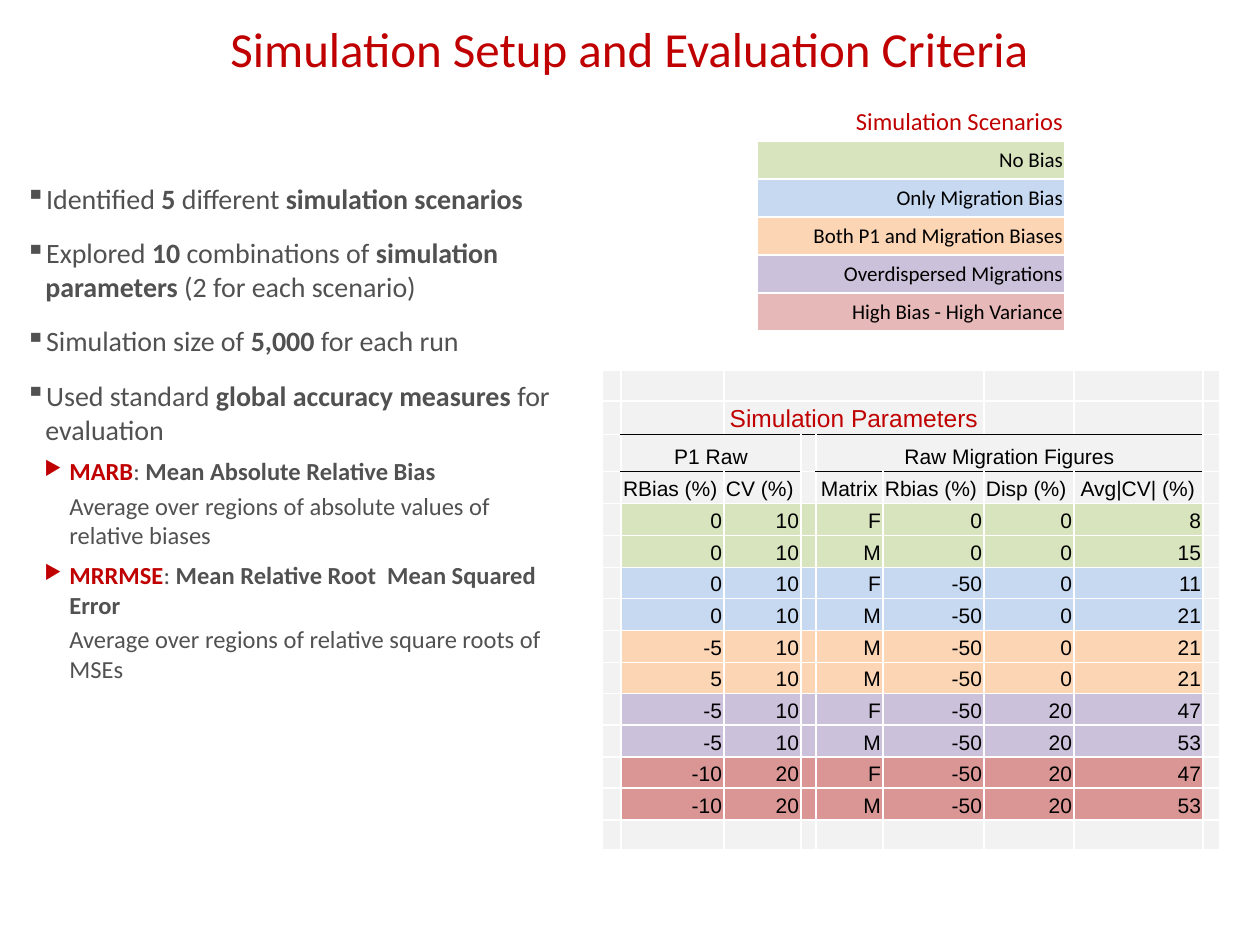
from lxml import etree
from pptx import Presentation
from pptx.dml.color import RGBColor
from pptx.enum.text import MSO_ANCHOR, PP_ALIGN
from pptx.oxml.ns import qn
from pptx.util import Pt

LEFT, CENTER, RIGHT = PP_ALIGN.LEFT, PP_ALIGN.CENTER, PP_ALIGN.RIGHT
MIDDLE, BOTTOM = MSO_ANCHOR.MIDDLE, MSO_ANCHOR.BOTTOM
PX = 914400 / 126

COLORS = {
    "red": "C00000", "gray": "505150", "black": "000000", "white": "FFFFFF",
    "panel": "F2F2F2", "green": "D7E4BD", "blue": "C6D9F1", "orange": "FCD5B5",
    "purple": "CCC1DA", "pink": "E6B9B8", "rose": "D99694",
}

TITLE = "Simulation Setup and Evaluation Criteria"

SCENARIOS = [
    ("No Bias", "green"),
    ("Only Migration Bias", "blue"),
    ("Both P1 and Migration Biases", "orange"),
    ("Overdispersed Migrations", "purple"),
    ("High Bias - High Variance", "pink"),
]

GROUPS = [(1, 2, "P1 Raw"), (4, 7, "Raw Migration Figures")]
HEADERS = [
    (1, "RBias (%)", LEFT), (2, "CV (%)", LEFT), (4, "Matrix", CENTER),
    (5, "Rbias (%)", LEFT), (6, "Disp (%)", LEFT), (7, " Avg|CV| (%)", LEFT),
]
DATA_COLUMNS = [1, 2, 4, 5, 6, 7]
DATA = [
    ("green", 0, 10, "F", 0, 0, 8),
    ("green", 0, 10, "M", 0, 0, 15),
    ("blue", 0, 10, "F", -50, 0, 11),
    ("blue", 0, 10, "M", -50, 0, 21),
    ("orange", -5, 10, "M", -50, 0, 21),
    ("orange", 5, 10, "M", -50, 0, 21),
    ("purple", -5, 10, "F", -50, 20, 47),
    ("purple", -5, 10, "M", -50, 20, 53),
    ("rose", -10, 20, "F", -50, 20, 47),
    ("rose", -10, 20, "M", -50, 20, 53),
]
COLUMN_WIDTHS = [19, 103, 77, 15, 67, 101, 90, 129, 17]
ROW_HEIGHTS = [31, 33, 37, 32] + [32, 32, 31] * 3 + [32, 30]

STYLES = {
    "point": {"level": 0, "size": 16, "before": 12, "margin": 20, "indent": -20, "bullet": "▪"},
    "measure": {"level": 1, "size": 14, "before": 6, "margin": 44, "indent": -25, "bullet": "▶"},
    "detail": {"level": 1, "size": 14, "before": 3, "margin": 44, "indent": 0, "bullet": None},
}
PLAIN, BOLD, KEY = ("gray", False), ("gray", True), ("red", True)
POINTS = [
    ("point", [("Identified ", PLAIN), ("5", BOLD), (" different ", PLAIN),
               ("simulation scenarios", BOLD)]),
    ("point", [("Explored ", PLAIN), ("10", BOLD), (" combinations of ", PLAIN),
               ("simulation parameters", BOLD), (" (2 for each scenario)", PLAIN)]),
    ("point", [("Simulation size of ", PLAIN), ("5,000", BOLD), (" for each run", PLAIN)]),
    ("point", [("Used standard ", PLAIN), ("global accuracy measures", BOLD),
               (" for evaluation", PLAIN)]),
    ("measure", [("MARB", KEY), (": ", PLAIN), ("Mean Absolute Relative Bias", BOLD)]),
    ("detail", [("Average over regions of absolute values of relative biases", PLAIN)]),
    ("measure", [("MRRMSE", KEY), (": ", PLAIN),
                 ("Mean Relative Root  Mean Squared Error", BOLD)]),
    ("detail", [("Average over regions of relative square roots of MSEs", PLAIN)]),
]


def px(value):
    return round(value * PX)


def add_run(paragraph, text, size, color, font, bold=False):
    run = paragraph.add_run()
    run.text = text
    run.font.name = font
    run.font.size = Pt(size)
    run.font.bold = bold
    run.font.color.rgb = RGBColor.from_string(COLORS[color])


def add_textbox(slide, left, top, width, height):
    return slide.shapes.add_textbox(px(left), px(top), px(width), px(height)).text_frame


def add_table(slide, left, top, widths, heights):
    frame = slide.shapes.add_table(len(heights), len(widths), px(left), px(top),
                                   px(sum(widths)), px(sum(heights)))
    table = frame.table
    table.first_row = table.horz_banding = False
    for column, width in zip(table.columns, widths):
        column.width = px(width)
    for row, height in zip(table.rows, heights):
        row.height = px(height)
    return table


def style_cell(cell, fill, black_sides=""):
    properties = cell._tc.get_or_add_tcPr()
    for side in "LRTB":
        line = etree.SubElement(properties, qn(f"a:ln{side}"), w="12700")
        solid = etree.SubElement(line, qn("a:solidFill"))
        color = COLORS["black" if side in black_sides else "white"]
        etree.SubElement(solid, qn("a:srgbClr"), val=color)
    cell.fill.solid()
    cell.fill.fore_color.rgb = RGBColor.from_string(COLORS[fill])
    cell.margin_left = cell.margin_right = px(2)
    cell.margin_top = cell.margin_bottom = 0
    end = etree.SubElement(cell.text_frame.paragraphs[0]._p, qn("a:endParaRPr"))
    end.set("sz", "1200")


def write_cell(cell, text, align, anchor, size=12, color="black", font="Arial", top=2, bottom=2):
    cell.vertical_anchor = anchor
    cell.margin_top, cell.margin_bottom = px(top), px(bottom)
    paragraph = cell.text_frame.paragraphs[0]
    paragraph.alignment = align
    add_run(paragraph, text, size, color, font)


def black_sides(row, column):
    grouped = any(first <= column <= last for first, last, _ in GROUPS)
    if row == 1 and 1 <= column <= 7:
        return "B"
    if row == 2 and 1 <= column <= 7:
        return "TB" if grouped else "T"
    return "T" if row == 3 and grouped else ""


def add_title(slide):
    frame = add_textbox(slide, 218, 9, 825, 77)
    frame.word_wrap = False
    frame.vertical_anchor = MIDDLE
    add_run(frame.paragraphs[0], TITLE, 28, "red", "Calibri")


def add_parameters(slide):
    table = add_table(slide, 602, 370, COLUMN_WIDTHS, ROW_HEIGHTS)
    for row in range(len(ROW_HEIGHTS)):
        for column in range(len(COLUMN_WIDTHS)):
            in_data = 4 <= row < 4 + len(DATA) and 1 <= column <= 7
            fill = DATA[row - 4][0] if in_data else "panel"
            style_cell(table.cell(row, column), fill, black_sides(row, column))
    for row in (0, 1):
        table.cell(row, 2).merge(table.cell(row, 5))
    write_cell(table.cell(1, 2), "Simulation Parameters", CENTER, BOTTOM, 14, "red")
    for first, last, text in GROUPS:
        table.cell(2, first).merge(table.cell(2, last))
        write_cell(table.cell(2, first), text, CENTER, BOTTOM, top=8)
    for column, text, align in HEADERS:
        write_cell(table.cell(3, column), text, align, BOTTOM, top=4)
    for row, (_, *values) in enumerate(DATA, 4):
        for column, value in zip(DATA_COLUMNS, values):
            write_cell(table.cell(row, column), str(value), RIGHT, BOTTOM)


def add_scenarios(slide):
    rows = [("Simulation Scenarios", "white", 14, "red")]
    rows += [(text, fill, 12, "black") for text, fill in SCENARIOS]
    table = add_table(slide, 757, 103, [308], [38] * len(rows))
    for row, (text, fill, size, color) in enumerate(rows):
        style_cell(table.cell(row, 0), fill)
        write_cell(table.cell(row, 0), text, RIGHT, MIDDLE, size, color, "Calibri", 0, 0)


def add_points(slide):
    frame = add_textbox(slide, 13, 175, 557, 524)
    frame.word_wrap = True
    for index, (kind, runs) in enumerate(POINTS):
        style = STYLES[kind]
        paragraph = frame.add_paragraph() if index else frame.paragraphs[0]
        paragraph.level = style["level"]
        properties = paragraph._p.get_or_add_pPr()
        properties.set("marL", str(px(style["margin"])))
        properties.set("indent", str(px(style["indent"])))
        if style["bullet"]:
            if kind == "measure":
                etree.SubElement(properties, qn("a:buSzPct"), val="80000")
            etree.SubElement(properties, qn("a:buChar"), char=style["bullet"])
        else:
            etree.SubElement(properties, qn("a:buNone"))
        paragraph.space_before = Pt(style["before"] if index else 0)
        for text, (color, bold) in runs:
            add_run(paragraph, text, style["size"], color, "Calibri", bold)


def main():
    presentation = Presentation()
    presentation.slide_width, presentation.slide_height = px(1260), px(945)
    slide = presentation.slides.add_slide(presentation.slide_layouts[6])
    add_title(slide)
    add_parameters(slide)
    add_scenarios(slide)
    add_points(slide)
    presentation.save("out.pptx")


if __name__ == "__main__":
    main()
